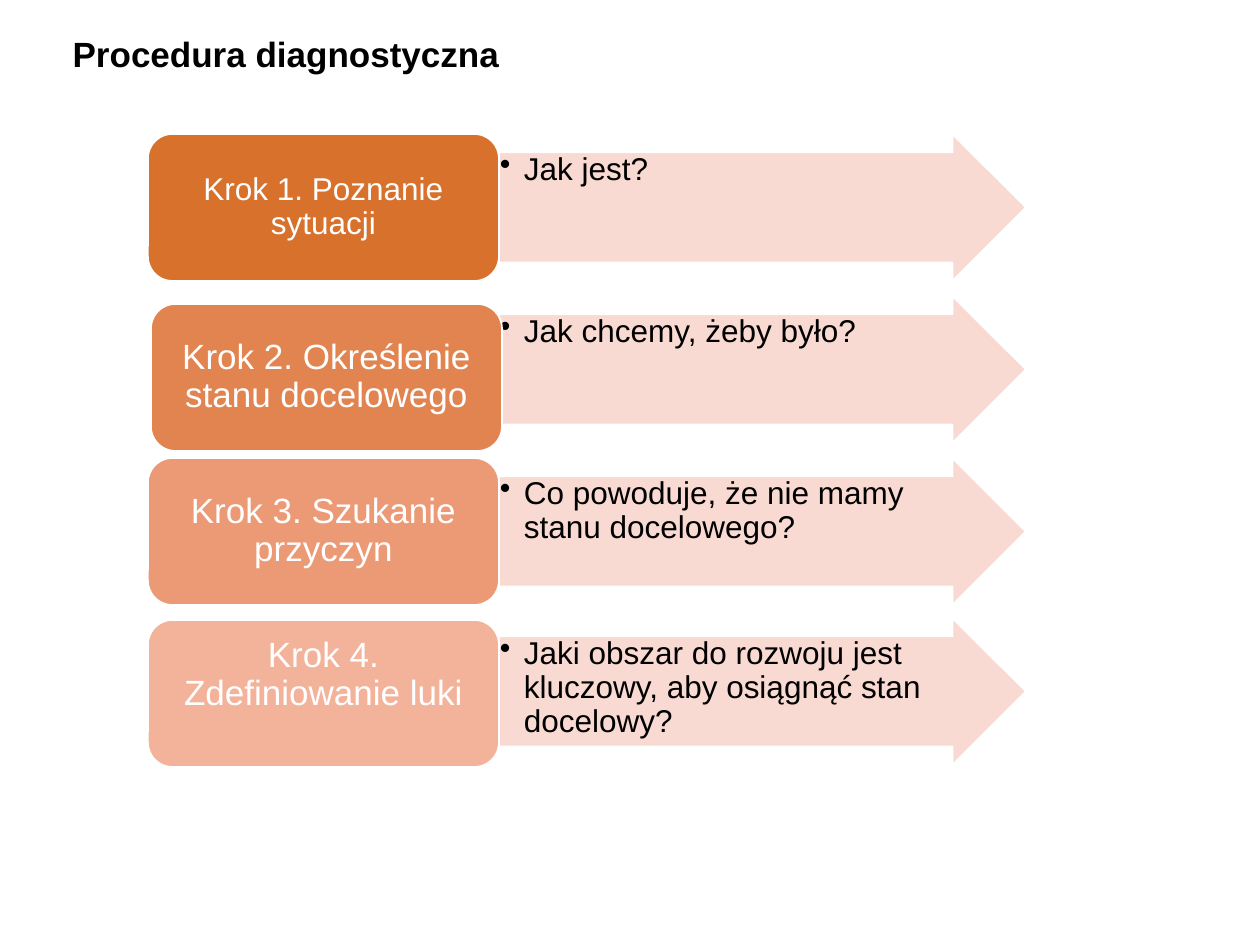
from dataclasses import dataclass

from lxml.etree import SubElement
from pptx import Presentation
from pptx.dml.color import RGBColor
from pptx.enum.shapes import MSO_SHAPE
from pptx.enum.text import MSO_ANCHOR, MSO_AUTO_SIZE, PP_ALIGN
from pptx.oxml.ns import qn
from pptx.util import Emu, Pt


@dataclass(frozen=True)
class Theme:
    font: str = "Arial"
    ink: str = "000000"
    paper: str = "FFFFFF"
    arrow: str = "F8D7CE"
    arrow_alpha: int = 90000
    title_size: int = 20
    question_size: int = 18


THEME = Theme()
PX_PER_INCH = 126
ROW_TOP, ROW_PITCH, ROW_HEIGHT = 134, 162, 147
CARD_LEFT, CARD_WIDTH = 148, 351
ARROW_LEFT, ARROW_WIDTH = 499, 527
BULLET_INDENT = 24


@dataclass(frozen=True)
class Step:
    label: str
    question: str
    color: str
    label_size: int = 20
    card_dx: int = 0
    card_dy: int = 0
    arrow_dy: int = 0
    bottom_inset: int = 5


STEPS = [
    Step("Krok 1. Poznanie sytuacji", "Jak jest?", "D7712C", label_size=18),
    Step("Krok 2. Określenie stanu docelowego", "Jak chcemy, żeby było?",
         "E28450", card_dx=3, card_dy=8),
    Step("Krok 3. Szukanie przyczyn",
         "Co powoduje, że nie mamy stanu docelowego?", "EB9A75"),
    Step("Krok 4. Zdefiniowanie luki",
         "Jaki obszar do rozwoju jest kluczowy, aby osiągnąć stan docelowy?",
         "F3B39B", arrow_dy=-2, bottom_inset=41),
]


def px(length):
    return Emu(round(length * 914400 / PX_PER_INCH))


def set_font(paragraph, size, color, bold=False):
    font = paragraph.font
    font.name = THEME.font
    font.size = Pt(size)
    font.bold = bold
    font.color.rgb = RGBColor.from_string(color)


def set_insets(frame, left, top, right, bottom):
    frame.margin_left, frame.margin_top = px(left), px(top)
    frame.margin_right, frame.margin_bottom = px(right), px(bottom)


def add_block(slide, preset, left, top, width, color, text):
    block = slide.shapes.add_shape(
        preset, px(left), px(top), px(width), px(ROW_HEIGHT))
    block.shadow.inherit = False
    block.fill.solid()
    block.fill.fore_color.rgb = RGBColor.from_string(color)
    block.line.color.rgb = RGBColor.from_string(THEME.paper)
    block.line.width = Pt(1)
    block.text_frame.word_wrap = True
    block.text_frame.text = text
    block.text_frame.paragraphs[0].line_spacing = 0.9
    return block


def add_bullet(paragraph):
    properties = paragraph._p.get_or_add_pPr()
    properties.set("marL", str(px(BULLET_INDENT)))
    properties.set("indent", str(-px(BULLET_INDENT)))
    SubElement(properties, qn("a:buChar"), char="•")


def add_arrow(slide, step, top):
    arrow = add_block(slide, MSO_SHAPE.RIGHT_ARROW, ARROW_LEFT,
                      top + step.arrow_dy, ARROW_WIDTH, THEME.arrow,
                      step.question)
    arrow.adjustments[0], arrow.adjustments[1] = 0.75, 0.5
    tint = arrow._element.spPr.find(qn("a:solidFill"))[0]
    SubElement(tint, qn("a:alpha"), val=str(THEME.arrow_alpha))
    frame = arrow.text_frame
    frame.vertical_anchor = MSO_ANCHOR.TOP
    set_insets(frame, 1, 1, 1, 1)
    question = frame.paragraphs[0]
    question.alignment = PP_ALIGN.LEFT
    add_bullet(question)
    set_font(question, THEME.question_size, THEME.ink)


def add_card(slide, step, top):
    card = add_block(slide, MSO_SHAPE.ROUNDED_RECTANGLE,
                     CARD_LEFT + step.card_dx, top + step.card_dy,
                     CARD_WIDTH, step.color, step.label)
    frame = card.text_frame
    frame.vertical_anchor = MSO_ANCHOR.MIDDLE
    set_insets(frame, 10, 5, 10, step.bottom_inset)
    label = frame.paragraphs[0]
    label.alignment = PP_ALIGN.CENTER
    set_font(label, step.label_size, THEME.paper)


def set_title(slide, text):
    title = slide.shapes.title
    title.left, title.top = px(60), px(26)
    title.width, title.height = px(465), px(55)
    frame = title.text_frame
    frame.text = text
    frame.word_wrap = True
    frame.auto_size = MSO_AUTO_SIZE.NONE
    frame.vertical_anchor = MSO_ANCHOR.TOP
    heading = frame.paragraphs[0]
    heading.alignment = PP_ALIGN.LEFT
    set_font(heading, THEME.title_size, THEME.ink, bold=True)


def main():
    deck = Presentation()
    deck.slide_width, deck.slide_height = px(1260), px(945)
    slide = deck.slides.add_slide(deck.slide_layouts[5])
    set_title(slide, "Procedura diagnostyczna")
    for row, step in enumerate(STEPS):
        top = ROW_TOP + row * ROW_PITCH
        add_arrow(slide, step, top)
        add_card(slide, step, top)
    deck.save("out.pptx")


if __name__ == "__main__":
    main()
